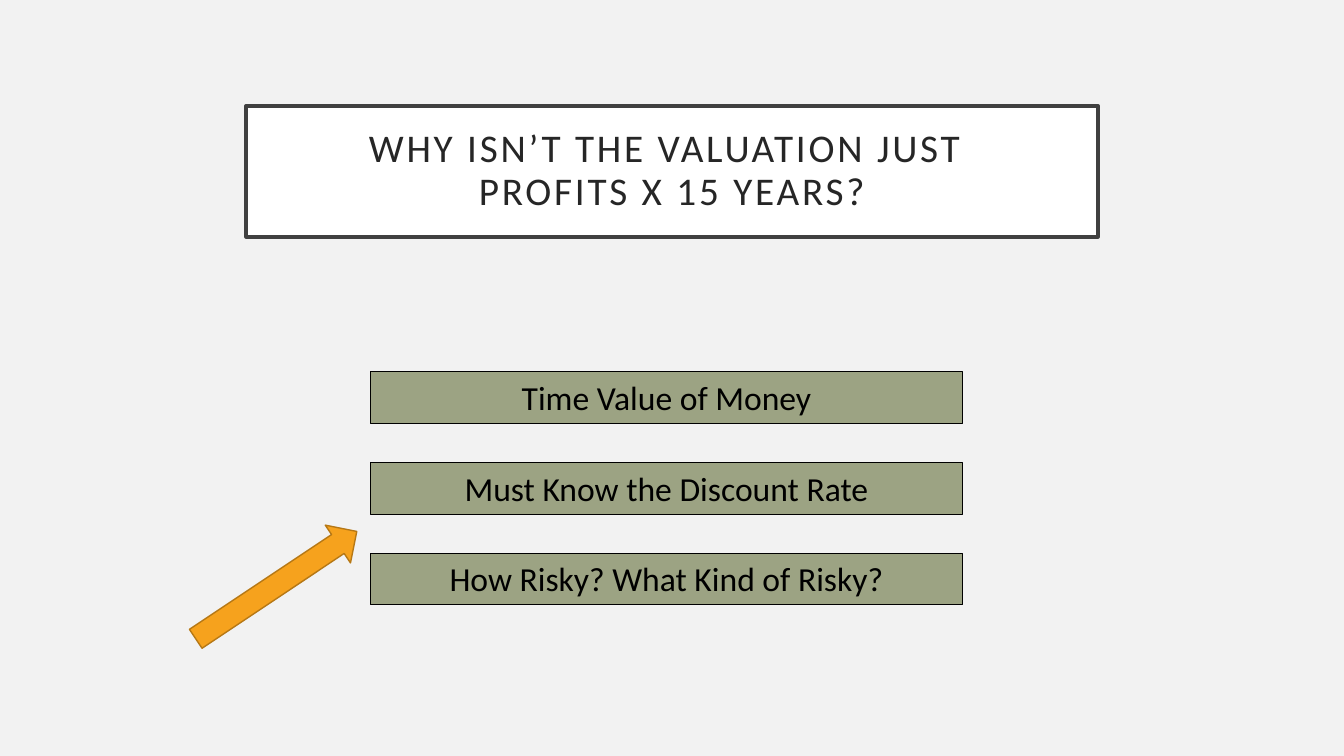
from pptx import Presentation
from pptx.dml.color import RGBColor
from pptx.enum.shapes import MSO_SHAPE as Shape
from pptx.enum.text import MSO_ANCHOR as Anchor, MSO_AUTO_SIZE as AutoSize, PP_ALIGN as Align
from pptx.util import Inches, Pt

PAPER = RGBColor(0xF2, 0xF2, 0xF2)
WHITE = RGBColor(0xFF, 0xFF, 0xFF)
BLACK = RGBColor(0x00, 0x00, 0x00)
FRAME = RGBColor(0x40, 0x40, 0x40)
INK = RGBColor(0x26, 0x26, 0x26)
SAGE = RGBColor(0x9C, 0xA3, 0x83)
ORANGE = RGBColor(0xF6, 0xA2, 0x1D)
BRONZE = RGBColor(0xB6, 0x78, 0x15)

REASONS = ["Time Value of Money", "Must Know the Discount Rate", "How Risky? What Kind of Risky?"]


class SlideBuilder:
    """Draws the elements of one slide in a shared style."""

    font = "Calibri"

    def __init__(self, page):
        self.page = page
        page.background.fill.solid()
        page.background.fill.fore_color.rgb = PAPER

    def shape(self, kind, place, fill, line, weight):
        box = self.page.shapes.add_shape(kind, *map(Inches, place))
        box.shadow.inherit = False
        box.fill.solid()
        box.fill.fore_color.rgb = fill
        box.line.color.rgb = line
        box.line.width = Pt(weight)
        return box

    def label(self, box, text, size, color):
        frame = box.text_frame
        frame.word_wrap = True
        frame.vertical_anchor = Anchor.MIDDLE
        frame.text = text
        para = frame.paragraphs[0]
        para.alignment = Align.CENTER
        for span in para.runs:
            span.font.name = self.font
            span.font.size = Pt(size)
            span.font.color.rgb = color
        return frame

    def title(self, text, place):
        box = self.shape(Shape.RECTANGLE, place, WHITE, FRAME, 2.5)
        frame = self.label(box, text, 28, INK)
        frame.margin_left = frame.margin_right = Inches(0.2)
        frame.margin_top = frame.margin_bottom = Inches(0.2)
        para = frame.paragraphs[0]
        para.line_spacing = 0.9
        for span in para.runs:
            span.font._element.set("spc", "200")

    def bar(self, text, place):
        box = self.shape(Shape.RECTANGLE, place, SAGE, BLACK, 0.75)
        frame = self.label(box, text, 24, BLACK)
        frame.vertical_anchor = Anchor.TOP
        frame.auto_size = AutoSize.SHAPE_TO_FIT_TEXT

    def arrow(self, place, angle):
        box = self.shape(Shape.RIGHT_ARROW, place, ORANGE, BRONZE, 1)
        box.rotation = angle


def main():
    deck = Presentation()
    deck.slide_width, deck.slide_height = Inches(13.33), Inches(7.5)
    builder = SlideBuilder(deck.slides.add_slide(deck.slide_layouts[6]))
    builder.title("WHY ISN’T THE VALUATION JUST \vPROFITS X 15 YEARS?", (2.44, 1.05, 8.45, 1.3))
    for row, reason in enumerate(REASONS):
        builder.bar(reason, (3.67, 3.69 + 0.9 * row, 5.88, 0.51))
    builder.arrow((1.78, 5.58, 1.92, 0.45), 326.3)
    deck.save("out.pptx")


if __name__ == "__main__":
    main()
